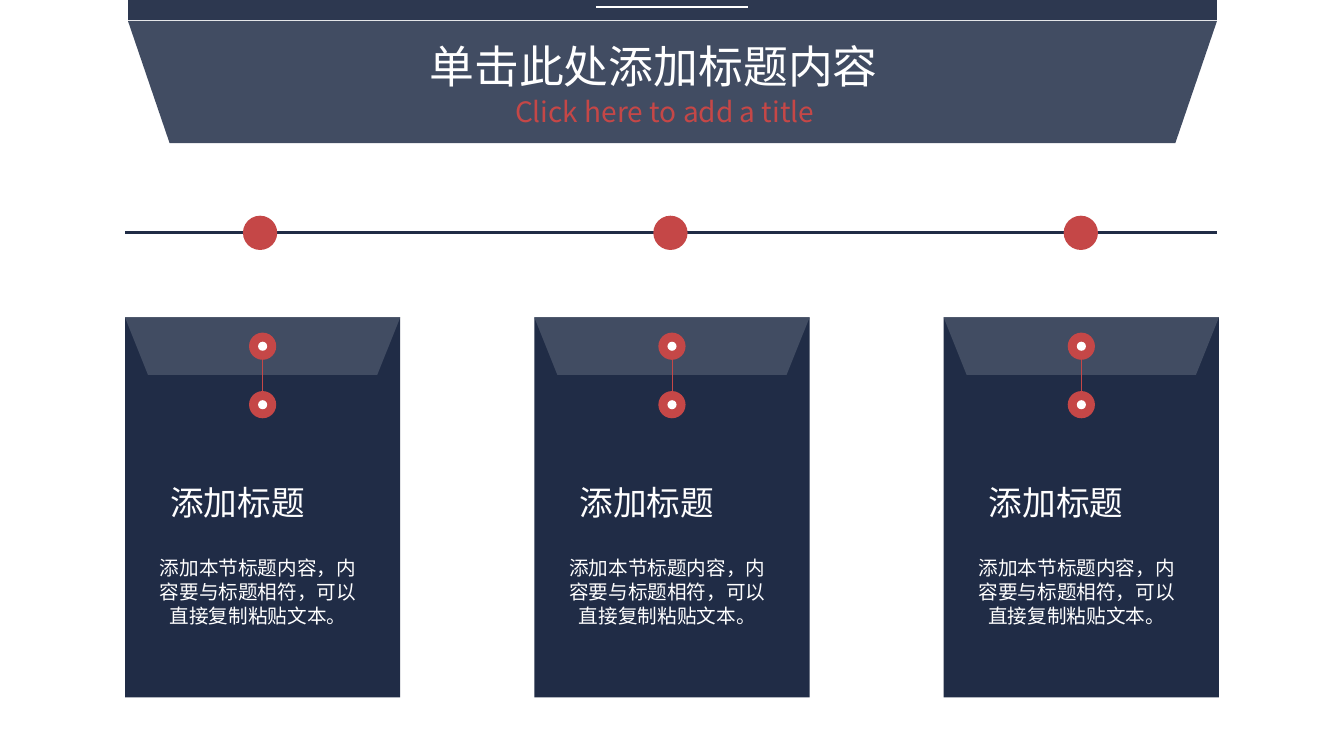
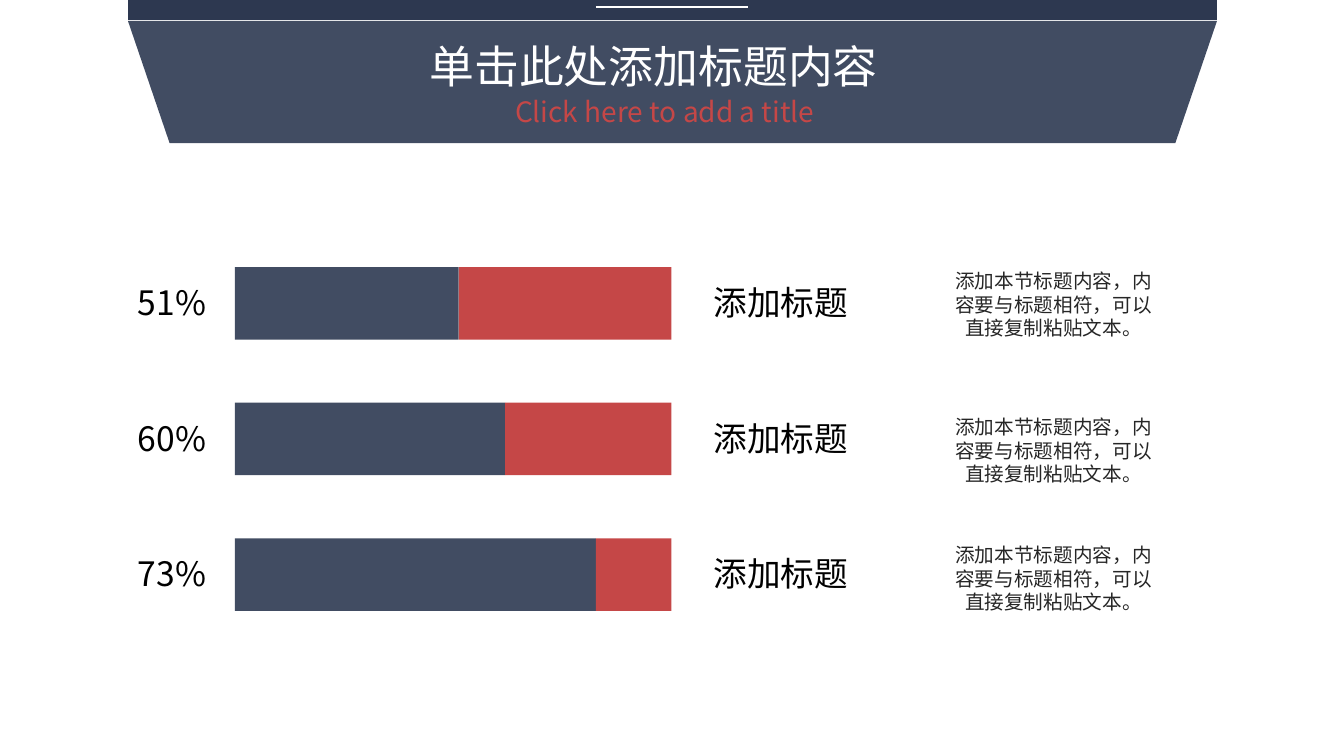
from lxml.etree import SubElement
from pptx import Presentation
from pptx.dml.color import RGBColor
from pptx.enum.shapes import MSO_CONNECTOR, MSO_SHAPE
from pptx.enum.text import MSO_ANCHOR, MSO_AUTO_SIZE, PP_ALIGN
from pptx.oxml.ns import qn
from pptx.util import Inches, Pt

FONT = "Noto Sans CJK SC"
NAVY = RGBColor(0x20, 0x2C, 0x46)
BAND = RGBColor(0x31, 0x3D, 0x55)
SLATE = RGBColor(0x41, 0x4C, 0x62)
RED = RGBColor(0xC5, 0x47, 0x47)
WHITE = RGBColor(0xFF, 0xFF, 0xFF)
BLACK = RGBColor(0x00, 0x00, 0x00)
INK = RGBColor(0x26, 0x26, 0x26)

SLIDE_WIDTH, SLIDE_HEIGHT = 13.33, 7.5
TITLE = "单击此处添加标题内容"
SUBTITLE = "Click here to add a title"
HEADING = "添加标题"
NOTE = "添加本节标题内容，内容要与标题相符，可以直接复制粘贴文本。"

CARDS = [(HEADING, NOTE)] * 3
# label, length of the dark part, heading, note, top of the note
BARS = [
    ("51%", 2.22, HEADING, NOTE, 2.62),
    ("60%", 2.68, HEADING, NOTE, 4.07),
    ("73%", 3.58, HEADING, NOTE, 5.34),
]

HEADER_LEFT, HEADER_WIDTH = 1.27, 10.8
CARD_LEFT, CARD_TOP, CARD_WIDTH, CARD_HEIGHT, CARD_STEP = 1.24, 3.15, 2.73, 3.77, 4.06
FLAP_HEIGHT = 0.57
RING, HOLE, RING_STEP = 0.27, 0.09, 0.58
AXIS_Y, AXIS_END, MARKER, MARKER_LEFT, MARKER_STEP = 2.31, 12.07, 0.34, 2.41, 4.07
BAR_LEFT, BAR_TOP, BAR_WIDTH, BAR_HEIGHT, BAR_STEP = 2.33, 2.65, 4.33, 0.72, 1.345


def add_block(shapes, kind, box, color, opacity=None):
    shape = shapes.add_shape(kind, *map(Inches, box))
    shape.shadow.inherit = False
    shape.fill.solid()
    shape.fill.fore_color.rgb = color
    shape.line.fill.background()
    if opacity:
        color_element = shape._element.spPr.find(f".//{qn('a:srgbClr')}")
        SubElement(color_element, qn("a:alpha"), val=str(opacity * 1000))
    return shape


def add_flap(shapes, box, slant, color, opacity=None):
    """Trapezoid with its wide side on top."""
    flap = add_block(shapes, MSO_SHAPE.TRAPEZOID, box, color, opacity)
    flap.adjustments[0] = slant
    flap._element.spPr.find(qn("a:xfrm")).set("flipV", "1")


def add_disc(shapes, center_x, center_y, size, color):
    box = (center_x - size / 2, center_y - size / 2, size, size)
    add_block(shapes, MSO_SHAPE.OVAL, box, color)


def add_line(shapes, start, end, color, width):
    line = shapes.add_connector(MSO_CONNECTOR.STRAIGHT, *map(Inches, start + end))
    line.line.color.rgb = color
    line.line.width = Pt(width)
    SubElement(line._element.spPr, qn("a:effectLst"))


def write(shape, text, size, color, align=PP_ALIGN.JUSTIFY):
    frame = shape.text_frame
    frame_format = {"word_wrap": True, "auto_size": MSO_AUTO_SIZE.NONE,
                    "vertical_anchor": MSO_ANCHOR.TOP}
    for name, value in frame_format.items():
        setattr(frame, name, value)
    paragraph = frame.paragraphs[0]
    paragraph.alignment = align
    run = paragraph.add_run()
    run.text = text
    for name, value in {"size": Pt(size), "name": FONT}.items():
        setattr(run.font, name, value)
    run.font.color.rgb = color
    SubElement(run._r.get_or_add_rPr(), qn("a:ea"), typeface=FONT)


def add_text(shapes, box, *text_format):
    write(shapes.add_textbox(*map(Inches, box)), *text_format)


def add_titled_slide(presentation):
    slide = presentation.slides.add_slide(presentation.slide_layouts[5])
    header = slide.shapes.add_group_shape().shapes
    add_flap(header, (HEADER_LEFT, 0.21, HEADER_WIDTH, 1.21), 0.341, BAND, 92)
    add_block(header, MSO_SHAPE.RECTANGLE, (HEADER_LEFT, 0, HEADER_WIDTH, 0.2), NAVY, 94)
    add_line(slide.shapes, (5.91, 0.07), (7.42, 0.07), WHITE, 1)

    title = slide.shapes.title
    slide.shapes._spTree.append(title._element)  # bring the title in front of the band
    position = {"left": 4.16, "top": 0.33, "width": 5.01, "height": 0.64}
    for name, value in position.items():
        setattr(title, name, Inches(value))
    write(title, TITLE, 32, WHITE)
    add_text(slide.shapes, (5.01, 0.89, 3.32, 0.44), SUBTITLE, 20, RED)
    return slide


def add_card(slide, left, heading, note):
    shapes = slide.shapes.add_group_shape().shapes
    add_block(shapes, MSO_SHAPE.RECTANGLE, (left, CARD_TOP, CARD_WIDTH, CARD_HEIGHT), NAVY)
    add_flap(shapes, (left, CARD_TOP, CARD_WIDTH, FLAP_HEIGHT), 0.4, SLATE)

    center_x = left + CARD_WIDTH / 2
    upper = CARD_TOP + FLAP_HEIGHT / 2
    lower = upper + RING_STEP
    for center_y in (upper, lower):
        add_disc(shapes, center_x, center_y, RING, RED)
        add_disc(shapes, center_x, center_y, HOLE, WHITE)
    add_line(shapes, (center_x, upper + HOLE / 2), (center_x, lower - HOLE / 2), RED, 0.5)

    add_text(shapes, (left + 0.35, CARD_TOP + 1.58, 1.95, 0.5), heading, 24, WHITE)
    add_text(shapes, (left + 0.24, CARD_TOP + 2.32, 2.16, 0.81),
             note, 14, WHITE, PP_ALIGN.CENTER)


def build_timeline(presentation):
    slide = add_titled_slide(presentation)
    add_line(slide.shapes, (CARD_LEFT, AXIS_Y), (AXIS_END, AXIS_Y), NAVY, 2)
    for index, (heading, note) in enumerate(CARDS):
        marker_x = MARKER_LEFT + MARKER / 2 + index * MARKER_STEP
        add_disc(slide.shapes, marker_x, AXIS_Y, MARKER, RED)
        add_card(slide, CARD_LEFT + index * CARD_STEP, heading, note)


def build_bars(presentation):
    slide = add_titled_slide(presentation)
    for index, (label, length, heading, note, note_top) in enumerate(BARS):
        top = BAR_TOP + index * BAR_STEP
        bar = slide.shapes.add_group_shape().shapes
        parts = [(BAR_LEFT, length, SLATE),
                 (BAR_LEFT + length, BAR_WIDTH - length, RED)]
        for left, width, color in parts:
            add_block(bar, MSO_SHAPE.RECTANGLE, (left, top, width, BAR_HEIGHT), color)
        add_text(slide.shapes, (HEADER_LEFT, top + 0.1, 0.9, 0.5), label, 24, BLACK)
        add_text(slide.shapes, (6.98, top + 0.1, 1.55, 0.5), heading, 24, BLACK)
        add_text(slide.shapes, (9.37, note_top, 2.16, 0.81), note, 14, INK, PP_ALIGN.CENTER)


def main():
    presentation = Presentation()
    presentation.slide_width = Inches(SLIDE_WIDTH)
    presentation.slide_height = Inches(SLIDE_HEIGHT)
    build_timeline(presentation)
    build_bars(presentation)
    presentation.save("out.pptx")


if __name__ == "__main__":
    main()
